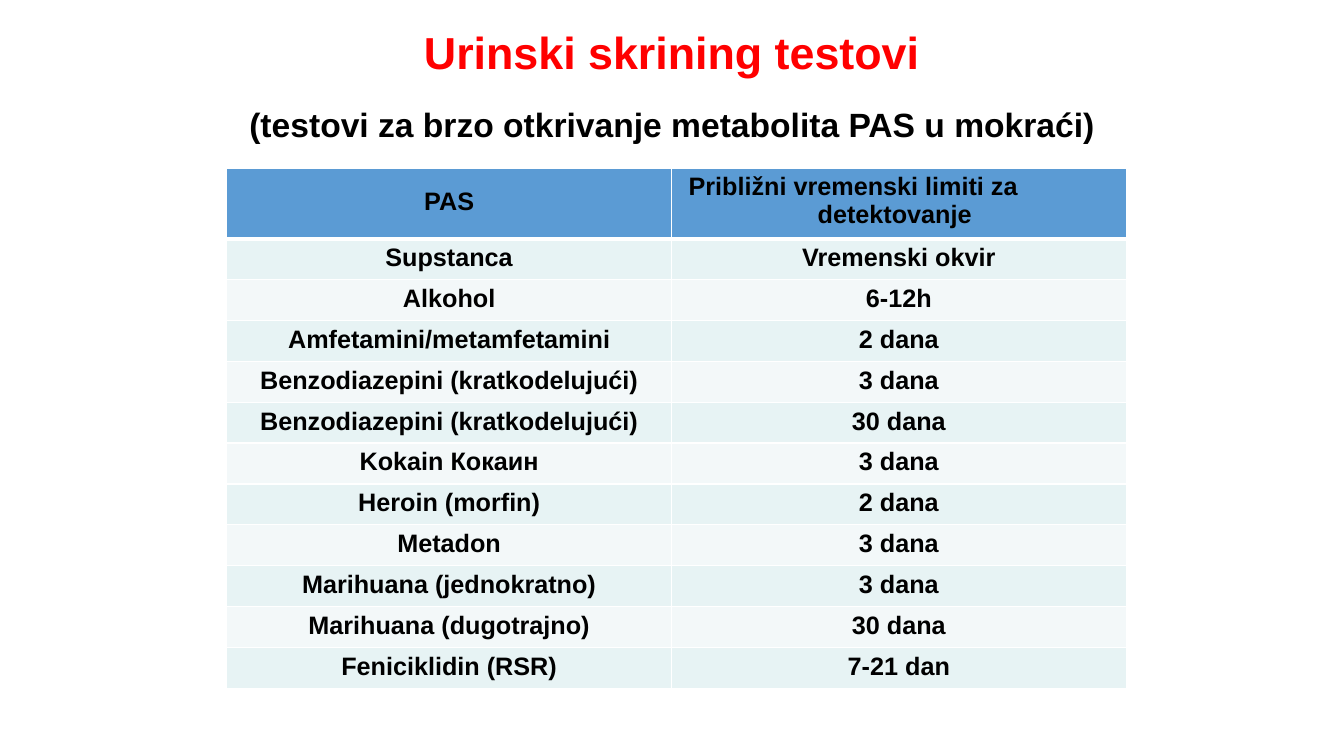
from lxml.etree import SubElement
from pptx import Presentation
from pptx.dml.color import RGBColor
from pptx.enum.text import MSO_ANCHOR as Anchor, PP_ALIGN as Align
from pptx.oxml.ns import qn
from pptx.util import Pt

EMU_PER_PX = 9144  # 100 px to the inch
WHITE, BLACK, RED = "FFFFFF", "000000", "FF0000"
HEADER_FILL, BAND_FILLS = "5B9BD4", ("E7F3F4", "F3F8F9")

HEADER = ("PAS", "Približni vremenski limiti za detektovanje")
ROWS = [
    ("Supstanca", "Vremenski okvir"),
    ("Alkohol", "6-12h"),
    ("Amfetamini/metamfetamini", "2 dana"),
    ("Benzodiazepini (kratkodelujući)", "3 dana"),
    ("Benzodiazepini (kratkodelujući)", "30 dana"),
    ("Kokain Кокаин", "3 dana"),
    ("Heroin (morfin)", "2 dana"),
    ("Metadon", "3 dana"),
    ("Marihuana (jednokratno)", "3 dana"),
    ("Marihuana (dugotrajno)", "30 dana"),
    ("Feniciklidin (RSR)", "7-21 dan"),
]


def px(length):
    return length * EMU_PER_PX


def color(hex_string):
    return RGBColor.from_string(hex_string)


def set_indent(paragraph, left, first_line=0):
    properties = paragraph._p.get_or_add_pPr()
    properties.set("marL", str(px(left)))
    properties.set("indent", str(px(first_line)))


def set_border(cell, side, points):
    """Draw one white edge; side is L, R, T or B, added in that order before the fill."""
    line = SubElement(cell._tc.get_or_add_tcPr(), qn(f"a:ln{side}"), w=str(Pt(points)))
    fill = SubElement(line, qn("a:solidFill"))
    SubElement(fill, qn("a:srgbClr"), val=WHITE)


class SlideBuilder:
    def __init__(self, presentation, font="Arial"):
        self.slide = presentation.slides.add_slide(presentation.slide_layouts[6])
        self.font = font

    def style_run(self, run, size, hex_string):
        run.font.name = self.font
        run.font.size = Pt(size)
        run.font.bold = True
        run.font.color.rgb = color(hex_string)

    def title(self, left, top, width, height, lines):
        """Add centred lines, each given as text, size and colour."""
        box = self.slide.shapes.add_textbox(px(left), px(top), px(width), px(height))
        frame = box.text_frame
        frame.word_wrap = True
        frame.vertical_anchor = Anchor.MIDDLE
        frame.margin_left = frame.margin_right = frame.margin_bottom = 0
        frame.margin_top = px(11)
        paragraph = frame.paragraphs[0]
        paragraph.text = "\v".join(text for text, _, _ in lines)
        paragraph.alignment = Align.CENTER
        paragraph.line_spacing = Pt(47)
        set_indent(paragraph, 91)
        for run, (_, size, hex_string) in zip(paragraph.runs, lines):
            self.style_run(run, size, hex_string)

    def cell(self, cell, text, fill, margin_top, top_border=1, bottom_border=1):
        for side, points in zip("LRTB", (1, 1, top_border, bottom_border)):
            set_border(cell, side, points)
        cell.fill.solid()
        cell.fill.fore_color.rgb = color(fill)
        cell.margin_left = cell.margin_right = cell.margin_bottom = 0
        cell.margin_top = px(margin_top)
        paragraph = cell.text_frame.paragraphs[0]
        paragraph.text = text
        paragraph.alignment = Align.CENTER
        self.style_run(paragraph.runs[0], 18, BLACK)
        return paragraph

    def table(self, left, top, column_widths, header_height, body_height):
        frame = self.slide.shapes.add_table(
            len(ROWS) + 1, len(HEADER), px(left), px(top),
            px(sum(column_widths)), px(header_height + body_height))
        table = frame.table
        for column, width in zip(table.columns, column_widths):
            column.width = px(width)
        for row in table.rows:
            row.height = px(body_height) // len(ROWS)
        table.rows[0].height = px(header_height)

        for column, (text, margin_top) in enumerate(zip(HEADER, (19, 4))):
            paragraph = self.cell(table.cell(0, column), text, HEADER_FILL,
                                  margin_top, bottom_border=3)
        paragraph.alignment = Align.LEFT
        set_indent(paragraph, 145, -128)

        for index, texts in enumerate(ROWS):
            for column, text in enumerate(texts):
                self.cell(table.cell(index + 1, column), text, BAND_FILLS[index % 2],
                          5, top_border=1 if index else 3)


def main():
    presentation = Presentation()
    presentation.slide_width, presentation.slide_height = px(1333), px(750)
    builder = SlideBuilder(presentation)
    builder.title(35, 4, 1172, 136, [
        ("Urinski skrining testovi", 32, RED),
        ("(testovi za brzo otkrivanje metabolita PAS u mokraći)", 24, BLACK),
    ])
    builder.table(225, 167, (441, 451), header_height=70, body_height=446)
    presentation.save("out.pptx")


if __name__ == "__main__":
    main()
